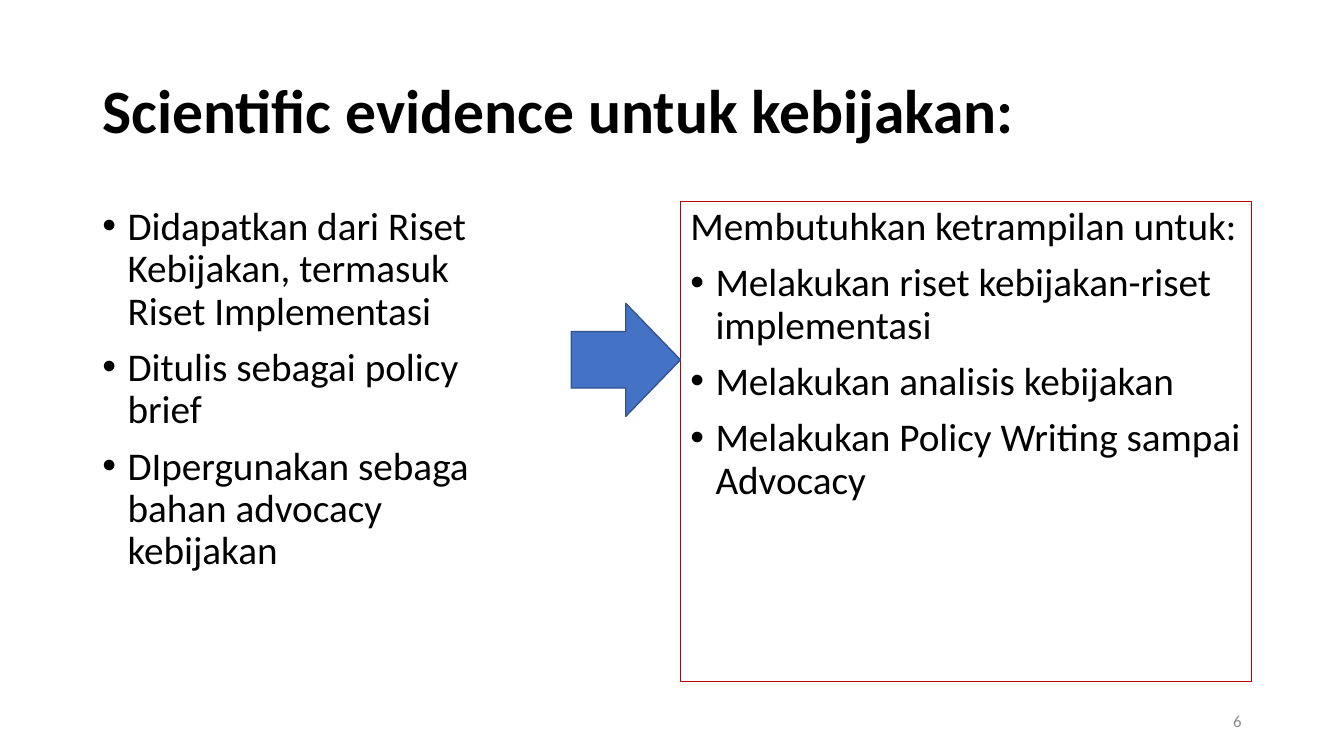
"""Build a slide on turning scientific evidence into health policy."""
from dataclasses import dataclass

from lxml import etree
from pptx import Presentation
from pptx.dml.color import RGBColor
from pptx.enum.shapes import MSO_SHAPE
from pptx.enum.text import MSO_ANCHOR, PP_ALIGN
from pptx.oxml.ns import qn
from pptx.slide import Slide
from pptx.util import Inches, Pt

RIGHT_ARROW = MSO_SHAPE.RIGHT_ARROW
TOP, MIDDLE = MSO_ANCHOR.TOP, MSO_ANCHOR.MIDDLE
LEFT, RIGHT = PP_ALIGN.LEFT, PP_ALIGN.RIGHT

WIDTH, HEIGHT = Inches(13.33), Inches(7.5)
COLUMNS, ROWS = 160, 150
INDENT = Inches(0.25)


@dataclass(frozen=True)
class Theme:
    font: str = "Calibri"
    ink: str = "000000"
    muted: str = "8C8C8C"
    frame: str = "C00000"
    arrow: str = "4472C4"
    arrow_edge: str = "325491"
    title_size: int = 44
    body_size: int = 28
    number_size: int = 12


@dataclass(frozen=True)
class Area:
    column: float
    row: float
    columns: float
    rows: float

    def box(self) -> tuple[int, int, int, int]:
        return (round(WIDTH * self.column / COLUMNS), round(HEIGHT * self.row / ROWS),
                round(WIDTH * self.columns / COLUMNS), round(HEIGHT * self.rows / ROWS))


@dataclass(frozen=True)
class Line:
    text: str
    bulleted: bool = True


@dataclass(frozen=True)
class Block:
    area: Area
    lines: tuple[Line, ...]
    size: int
    color: str
    bold: bool = False
    anchor: MSO_ANCHOR = TOP
    align: PP_ALIGN = LEFT
    spacing: float = 0.9
    before: int = 0
    frame: str | None = None


THEME = Theme()
BODY = {"size": THEME.body_size, "color": THEME.ink, "before": 10}
BLOCKS = (
    Block(Area(11, 8, 138, 29), (Line("Scientific evidence untuk kebijakan:", False),),
          THEME.title_size, THEME.ink, bold=True, anchor=MIDDLE),
    Block(Area(11, 40, 53, 95.2), (
        Line("Didapatkan dari Riset Kebijakan, termasuk Riset Implementasi"),
        Line("Ditulis sebagai policy brief"),
        Line("DIpergunakan sebaga bahan advocacy kebijakan"),
    ), **BODY),
    Block(Area(81, 40, 68, 95.2), (
        Line("Membutuhkan ketrampilan untuk:", False),
        Line("Melakukan riset kebijakan-riset implementasi"),
        Line("Melakukan analisis kebijakan"),
        Line("Melakukan Policy Writing sampai Advocacy"),
    ), frame=THEME.frame, **BODY),
    Block(Area(113, 139, 36, 8), (Line("6", False),), THEME.number_size, THEME.muted,
          anchor=MIDDLE, align=RIGHT, spacing=1.0),
)
ARROW_AREA = Area(68, 60.2, 13, 22.4)


def apply(target: object, values: dict[str, object]) -> None:
    for name, value in values.items():
        setattr(target, name, value)


def draw_block(slide: Slide, block: Block) -> None:
    panel = slide.shapes.add_textbox(*block.area.box())
    apply(panel.text_frame, {"word_wrap": True, "vertical_anchor": block.anchor})
    if block.frame:
        panel.line.color.rgb = RGBColor.from_string(block.frame)
        panel.line.width = Pt(0.75)
    for index, line in enumerate(block.lines):
        paragraph = (panel.text_frame.add_paragraph() if index
                     else panel.text_frame.paragraphs[0])
        apply(paragraph, {"alignment": block.align, "line_spacing": block.spacing,
                          "space_before": Pt(block.before)})
        run = paragraph.add_run()
        run.text = line.text
        apply(run.font, {"name": THEME.font, "size": Pt(block.size), "bold": block.bold})
        run.font.color.rgb = RGBColor.from_string(block.color)
        if line.bulleted:
            properties = paragraph.alignment is not None and paragraph._p.get_or_add_pPr()
            properties.set("marL", str(INDENT))
            properties.set("indent", str(-INDENT))
            etree.SubElement(properties, qn("a:buFont"), typeface="Arial")
            etree.SubElement(properties, qn("a:buChar"), char="•")


def draw_arrow(slide: Slide, area: Area) -> None:
    arrow = slide.shapes.add_shape(RIGHT_ARROW, *area.box())
    arrow.shadow.inherit = False
    arrow.fill.solid()
    arrow.fill.fore_color.rgb = RGBColor.from_string(THEME.arrow)
    arrow.line.color.rgb = RGBColor.from_string(THEME.arrow_edge)
    arrow.line.width = Pt(1)


def main() -> None:
    deck = Presentation()
    apply(deck, {"slide_width": WIDTH, "slide_height": HEIGHT})
    slide = deck.slides.add_slide(deck.slide_layouts[6])
    for block in BLOCKS:
        draw_block(slide, block)
    draw_arrow(slide, ARROW_AREA)
    deck.save("out.pptx")


if __name__ == "__main__":
    main()
